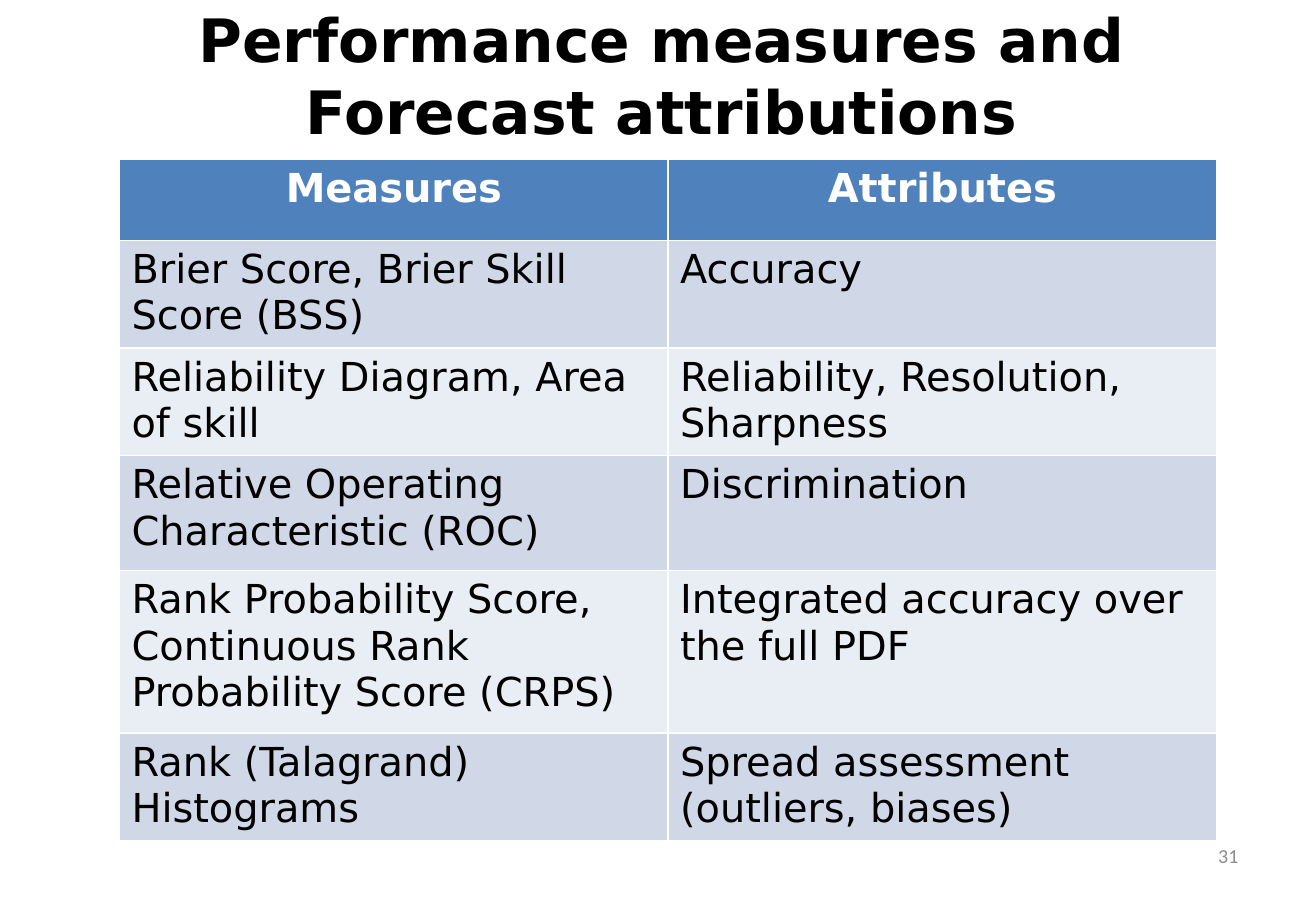
import pptx
import pptx.util
from pptx.dml.color import RGBColor
from pptx.enum.text import MSO_ANCHOR, PP_ALIGN
from pptx.util import Inches

BLACK = RGBColor(0x00, 0x00, 0x00)
WHITE = RGBColor(0xFF, 0xFF, 0xFF)
GRAY = RGBColor(0x8C, 0x8C, 0x8C)
HEADER_BLUE = RGBColor(0x4F, 0x81, 0xBD)
BAND_DARK = RGBColor(0xD0, 0xD8, 0xE8)
BAND_LIGHT = RGBColor(0xE9, 0xED, 0xF4)

MAIN_FONT = "DejaVu Sans"
NUMBER_FONT = "Calibri"

MEASURES = [
    ("Measures", "Attributes"),
    ("Brier Score, Brier Skill Score (BSS)", "Accuracy"),
    ("Reliability Diagram, Area of skill", "Reliability, Resolution, Sharpness"),
    ("Relative Operating Characteristic (ROC)", "Discrimination"),
    ("Rank Probability Score, Continuous Rank Probability Score (CRPS)",
     "Integrated accuracy over the full PDF"),
    ("Rank (Talagrand) Histograms", "Spread assessment (outliers, biases)"),
]
ROW_HEIGHTS = [0.68, 0.68, 0.68, 0.96, 1.36, 0.68]


def write_text(text_frame, text, size, color, font=MAIN_FONT, bold=False,
               alignment=PP_ALIGN.LEFT):
    text_frame.text = text
    text_frame.word_wrap = True
    paragraph = text_frame.paragraphs[0]
    paragraph.alignment = alignment
    run_font = paragraph.runs[0].font
    run_font.name = font
    run_font.size = pptx.util.Pt(size)
    run_font.bold = bold
    run_font.color.rgb = color


def place_title(slide, left, top, width, height):
    title = slide.shapes.title
    title.left, title.top, title.width, title.height = left, top, width, height
    title.text_frame.vertical_anchor = MSO_ANCHOR.MIDDLE
    write_text(title.text_frame, "Performance measures and Forecast attributions",
               36, BLACK, bold=True, alignment=PP_ALIGN.CENTER)


def add_measures_table(slide, left, top, width, height):
    """Add the table; white rules come from the default table style."""
    table = slide.shapes.add_table(
        len(MEASURES), len(MEASURES[0]), left, top, width, height).table
    for row_index, labels in enumerate(MEASURES):
        table.rows[row_index].height = Inches(ROW_HEIGHTS[row_index])
        is_header = row_index == 0
        if is_header:
            fill_color = HEADER_BLUE
        else:
            fill_color = BAND_DARK if row_index % 2 else BAND_LIGHT
        for column_index, label in enumerate(labels):
            cell = table.cell(row_index, column_index)
            cell.fill.solid()
            cell.fill.fore_color.rgb = fill_color
            write_text(cell.text_frame, label, 24,
                       WHITE if is_header else BLACK, bold=is_header,
                       alignment=PP_ALIGN.CENTER if is_header else PP_ALIGN.LEFT)


def add_slide_number(slide, left, top, width, height):
    text_frame = slide.shapes.add_textbox(left, top, width, height).text_frame
    text_frame.vertical_anchor = MSO_ANCHOR.MIDDLE
    write_text(text_frame, "31", 12, GRAY, font=NUMBER_FONT,
               alignment=PP_ALIGN.RIGHT)


def main():
    presentation = pptx.Presentation()
    presentation.slide_width = Inches(11)
    presentation.slide_height = Inches(7.5)
    slide = presentation.slides.add_slide(presentation.slide_layouts[5])
    add_slide_number(slide, Inches(7.88), Inches(6.95), Inches(2.57), Inches(0.4))
    place_title(slide, Inches(0.58), Inches(0), Inches(9.9), Inches(1.25))
    add_measures_table(slide, Inches(1), Inches(1.33), Inches(9.17),
                       Inches(sum(ROW_HEIGHTS)))
    presentation.save("out.pptx")


if __name__ == "__main__":
    main()
